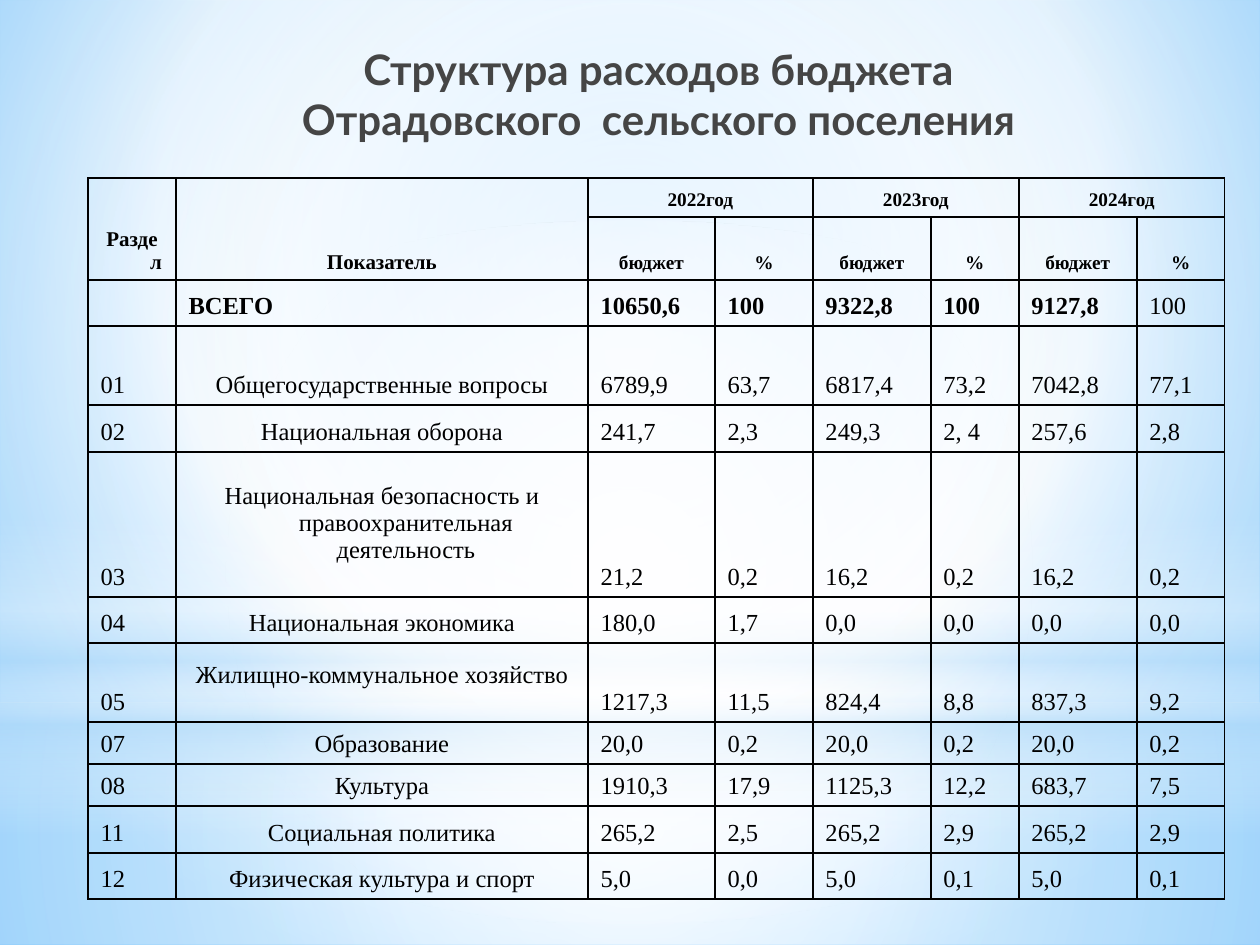
from dataclasses import dataclass

from lxml.etree import SubElement
from pptx import Presentation
from pptx.dml.color import RGBColor
from pptx.enum.shapes import MSO_SHAPE as SHAPE
from pptx.enum.text import MSO_ANCHOR as ANCHOR, PP_ALIGN as ALIGN
from pptx.oxml import parse_xml
from pptx.oxml.ns import nsdecls, qn
from pptx.util import Pt

SCALE = 914400 / 126


@dataclass(frozen=True)
class Theme:
    ink: str = "000000"
    title: str = "454545"
    white: str = "FFFFFF"
    sky: str = "B4DCFA"
    bg_inner: str = "9ED5FF"
    bg_outer: str = "5BB9FF"
    title_font: str = "Lato"
    table_font: str = "Times New Roman"
    title_size: int = 24
    head_size: int = 12
    year_size: int = 11
    body_size: int = 14
    border: int = 1


T = Theme()
CENTER = (50, 50, 50, 50)
COLS = [88, 412, 127, 98, 118, 88, 118, 88]
HEIGHTS = [39, 63, 46, 79, 47, 145, 46, 79, 42, 42, 47, 46]
YEARS = ["2022год", "2023год", "2024год"]
ROWS = [
    ["", "ВСЕГО", "10650,6", "100", "9322,8", "100", "9127,8", "100"],
    ["01", "Общегосударственные вопросы", "6789,9", "63,7", "6817,4", "73,2", "7042,8", "77,1"],
    ["02", "Национальная оборона", "241,7", "2,3", "249,3", "2, 4", "257,6", "2,8"],
    ["03", "Национальная безопасность и правоохранительная деятельность",
     "21,2", "0,2", "16,2", "0,2", "16,2", "0,2"],
    ["04", "Национальная экономика", "180,0", "1,7", "0,0", "0,0", "0,0", "0,0"],
    ["05", "Жилищно-коммунальное хозяйство", "1217,3", "11,5", "824,4", "8,8", "837,3", "9,2"],
    ["07", "Образование", "20,0", "0,2", "20,0", "0,2", "20,0", "0,2"],
    ["08", "Культура", "1910,3", "17,9", "1125,3", "12,2", "683,7", "7,5"],
    ["11", "Социальная политика", "265,2", "2,5", "265,2", "2,9", "265,2", "2,9"],
    ["12", "Физическая культура и спорт", "5,0", "0,0", "5,0", "0,1", "5,0", "0,1"],
]
RAISED = {"03", "05"}


def px(n):
    return round(n * SCALE)


def write(p, text, font, size, color=T.ink, bold=False, align=ALIGN.LEFT, hang=0):
    p.alignment = align
    if hang:
        pPr = p._p.get_or_add_pPr()
        pPr.set("marL", str(px(hang)))
        pPr.set("indent", str(-px(hang)))
    if not text:
        SubElement(p._p, qn("a:endParaRPr")).set("sz", str(size * 100))
        return
    for i, line in enumerate(text.split("\n")):
        if i:
            p.add_line_break()
        r = p.add_run()
        r.text = line
        r.font.name, r.font.size, r.font.bold = font, Pt(size), bold
        r.font.color.rgb = RGBColor.from_string(color)


def paint(fill, parent, stops, focus=None):
    fill.solid()
    gs = "".join(
        f'<a:gs pos="{pos * 1000}"><a:srgbClr val="{color}">'
        f'<a:alpha val="{alpha * 1000}"/></a:srgbClr></a:gs>'
        for pos, color, alpha in stops)
    way = '<a:lin ang="5400000" scaled="0"/>'
    if focus:
        sides = " ".join(f'{k}="{v * 1000}"' for k, v in zip("ltrb", focus))
        way = f'<a:path path="circle"><a:fillToRect {sides}/></a:path>'
    grad = parse_xml(f'<a:gradFill {nsdecls("a")} rotWithShape="1">'
                     f'<a:gsLst>{gs}</a:gsLst>{way}</a:gradFill>')
    parent.replace(parent.find(qn("a:solidFill")), grad)


class Deck:
    """Holds the theme and the current slide, and adds each kind of element."""

    def __init__(self, theme):
        self.t = theme
        self.prs = Presentation()
        self.prs.slide_width, self.prs.slide_height = px(1260), px(945)
        self.s = self.prs.slides.add_slide(self.prs.slide_layouts[6])

    def background(self, stops, focus):
        fill = self.s.background.fill
        fill.solid()
        paint(fill, self.s._element.find(".//" + qn("p:bgPr")), stops, focus)

    def glow(self, kind, y, h, stops, focus=None):
        sp = self.s.shapes.add_shape(kind, 0, px(y), px(1260), px(h))
        sp.shadow.inherit = False
        sp.line.fill.background()
        paint(sp.fill, sp._element.spPr, stops, focus)

    def title(self, x, y, w, h, text):
        tf = self.s.shapes.add_textbox(px(x), px(y), px(w), px(h)).text_frame
        tf.word_wrap = True
        tf.margin_top = px(8)
        write(tf.paragraphs[0], text, self.t.title_font, self.t.title_size,
              self.t.title, bold=True, align=ALIGN.CENTER)

    def table(self, x, y, cols, heights):
        tb = self.s.shapes.add_table(len(heights), len(cols), px(x), px(y),
                                     px(sum(cols)), px(sum(heights))).table
        tb.first_row = tb.horz_banding = False
        for col, w in zip(tb.columns, cols):
            col.width = px(w)
        for row, h in zip(tb.rows, heights):
            row.height = px(h)
        for cell in tb.iter_cells():
            self.frame(cell)
        return tb

    def frame(self, cell):
        tcPr = cell._tc.get_or_add_tcPr()
        for side in ("lnL", "lnR", "lnT", "lnB"):
            tcPr.append(parse_xml(
                f'<a:{side} {nsdecls("a")} w="{Pt(self.t.border)}"><a:solidFill>'
                f'<a:srgbClr val="{self.t.ink}"/></a:solidFill></a:{side}>'))
        cell.fill.background()
        cell.vertical_anchor = ANCHOR.BOTTOM

    def cell(self, cell, text, size, lift=0, **fmt):
        cell.margin_bottom = px(6 + lift)
        write(cell.text_frame.paragraphs[0], text, self.t.table_font, size, **fmt)


def budget_table(d):
    tb = d.table(88, 178, COLS, HEIGHTS)
    head = dict(bold=True, align=ALIGN.CENTER, hang=48)
    for c, text in enumerate(["Раздел", "Показатель"]):
        tb.cell(0, c).merge(tb.cell(1, c))
        d.cell(tb.cell(0, c), text, T.head_size, **head)
    for i, year in enumerate(YEARS):
        c = 2 + 2 * i
        tb.cell(0, c).merge(tb.cell(0, c + 1))
        d.cell(tb.cell(0, c), year, T.year_size, **head)
        d.cell(tb.cell(1, c), "бюджет", T.year_size, **head)
        d.cell(tb.cell(1, c + 1), "%", T.year_size, **head)
    for r, row in enumerate(ROWS):
        total, code = r == 0, row[0]
        for c, text in enumerate(row):
            named = c == 1
            d.cell(tb.cell(r + 2, c), text, T.body_size,
                   lift=27 if named and code in RAISED else 0,
                   bold=total and c < 7,
                   align=ALIGN.CENTER if named and not total else ALIGN.LEFT,
                   hang=0 if code == "11" else 48)


def main():
    d = Deck(T)
    d.background([(0, T.bg_inner, 100), (60, T.white, 100), (100, T.bg_outer, 100)],
                 (20, 10, 20, 60))
    d.glow(SHAPE.RECTANGLE, 703, 242,
           [(0, T.white, 91), (37, T.white, 76), (100, T.sky, 79)], CENTER)
    d.glow(SHAPE.RECTANGLE, 0, 703,
           [(0, T.white, 89), (48, T.white, 62), (100, T.sky, 79)], CENTER)
    d.glow(SHAPE.RECTANGLE, 519, 315,
           [(0, T.white, 0), (29, T.white, 30), (45, T.sky, 40),
            (55, T.white, 26), (65, T.sky, 60), (100, T.white, 0)])
    d.glow(SHAPE.OVAL, 221, 703, [(0, T.white, 100), (56, T.white, 0)], CENTER)
    d.title(123, 35, 1071, 158, "Структура расходов бюджета\nОтрадовского  сельского поселения")
    budget_table(d)
    d.prs.save("out.pptx")


if __name__ == "__main__":
    main()
